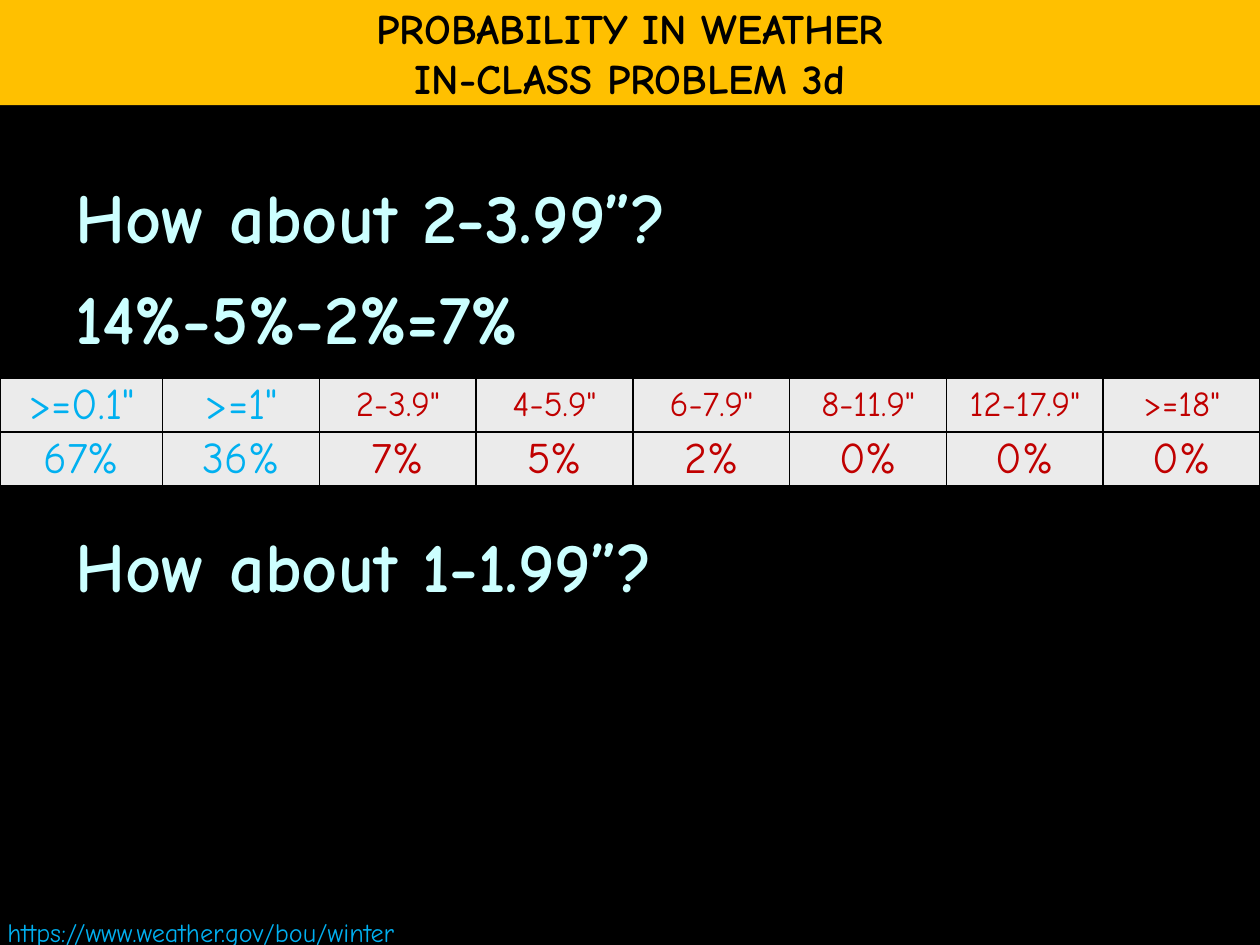
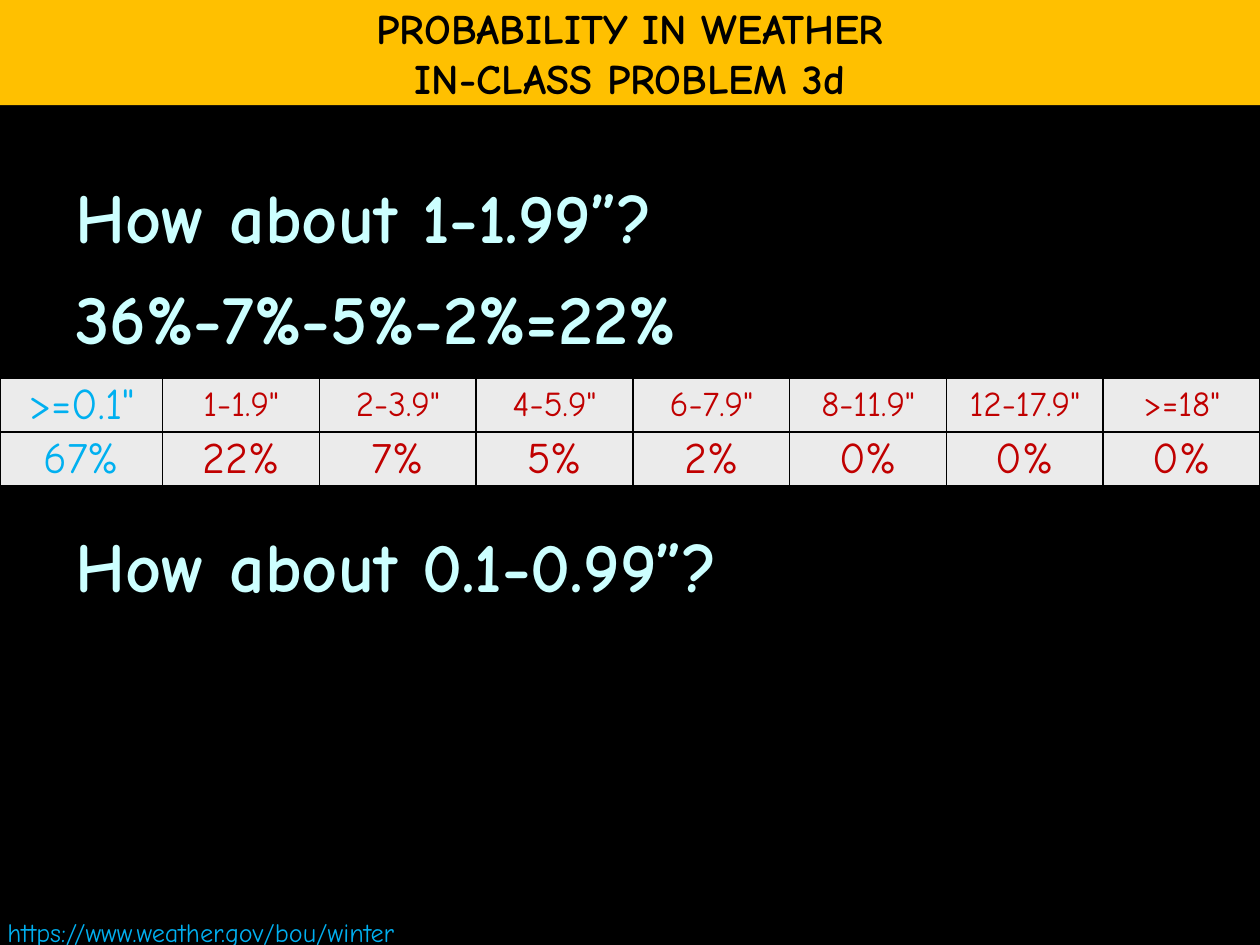
from lxml import etree
from pptx import Presentation
from pptx import util as u
from pptx.dml.color import RGBColor
from pptx.enum import shapes, text
from pptx.oxml import ns

# Content
TITLE = ["PROBABILITY IN WEATHER", "IN-CLASS PROBLEM 3d"]
SOURCE = "https://www.weather.gov/bou/winter"
UPPER_RANGES = [("4-5.9\"", "5%"), ("6-7.9\"", "2%"), ("8-11.9\"", "0%"),
                ("12-17.9\"", "0%"), (">=18\"", "0%")]
AT_LEAST_TENTH = (">=0.1\"", "67%")
TWO_TO_FOUR = ("2-3.9\"", "7%")
PROBLEMS = [
    {"lines": ["How about 2-3.99”?", "14%-5%-2%=7%", "How about 1-1.99”?"],
     "cumulative": [AT_LEAST_TENTH, (">=1\"", "36%")],
     "solved": [TWO_TO_FOUR] + UPPER_RANGES},
    {"lines": ["How about 1-1.99”?", "36%-7%-5%-2%=22%", "How about 0.1-0.99”?"],
     "cumulative": [AT_LEAST_TENTH],
     "solved": [("1-1.9\"", "22%"), TWO_TO_FOUR] + UPPER_RANGES},
]

# Style
FONT = "Comic Neue"
COLORS = {"background": "000000", "band": "FFC000", "title": "000000",
          "question": "CCFFFF", "cumulative": "00B0F0", "solved": "C00000",
          "source": "00B0F0", "cell": "EBEBEB", "border": "000000"}
WIDTH, HEIGHT = u.Cm(25.4), u.Cm(19.05)
FIRST_COLUMN, ROW_HEIGHT = u.Cm(3.28), u.Cm(1.09)
LINE_GAP, TABLE_GAP = 9.5, 94  # points above a line, and above the line below the table


def color(name):
    return RGBColor.from_string(COLORS[name])


def write(frame, lines, size, color_name, bold=False, align=text.PP_ALIGN.LEFT, gaps=None):
    for index, line in enumerate(lines):
        paragraph = frame.paragraphs[0] if index == 0 else frame.add_paragraph()
        paragraph.alignment = align
        if gaps:
            paragraph.space_before = u.Pt(gaps[index])
        run = paragraph.add_run()
        run.text = line
        run.font.name, run.font.size, run.font.bold = FONT, u.Pt(size), bold
        run.font.color.rgb = color(color_name)


def add_text(slide, left, top, width, height, lines, **style):
    frame = slide.shapes.add_textbox(left, top, width, height).text_frame
    frame.word_wrap = True
    write(frame, lines, **style)
    return frame


def add_borders(cell):
    properties = cell._tc.get_or_add_tcPr()
    for position, side in enumerate(("lnL", "lnR", "lnT", "lnB")):
        line = etree.Element(ns.qn("a:" + side), w=str(u.Pt(1)))
        fill = etree.SubElement(line, ns.qn("a:solidFill"))
        etree.SubElement(fill, ns.qn("a:srgbClr"), val=COLORS["border"])
        properties.insert(position, line)


def add_chances(slide, cumulative, solved):
    columns = cumulative + solved
    table = slide.shapes.add_table(2, len(columns), 0, u.Cm(7.62), WIDTH, 2 * ROW_HEIGHT).table
    other_width = (WIDTH - FIRST_COLUMN) // (len(columns) - 1)
    for index, column in enumerate(columns):
        table.columns[index].width = other_width if index else FIRST_COLUMN
        kind = "cumulative" if index < len(cumulative) else "solved"
        for row, value in enumerate(column):
            cell = table.cell(row, index)
            cell.fill.solid()
            cell.fill.fore_color.rgb = color("cell")
            cell.vertical_anchor = text.MSO_ANCHOR.MIDDLE
            cell.margin_left = cell.margin_right = cell.margin_top = u.Cm(0.02)
            cell.margin_bottom = 0
            size = 20 if kind == "solved" and row == 0 else 25
            write(cell.text_frame, [value], size, kind, align=text.PP_ALIGN.CENTER)
            add_borders(cell)


def add_title_band(slide):
    band = slide.shapes.add_shape(shapes.MSO_SHAPE.RECTANGLE, 0, 0, WIDTH, u.Cm(2.12))
    band.shadow.inherit = False
    band.fill.solid()
    band.fill.fore_color.rgb = color("band")
    band.line.fill.background()
    band.text_frame.word_wrap = False
    band.text_frame.vertical_anchor = text.MSO_ANCHOR.MIDDLE
    write(band.text_frame, TITLE, 24, "title", bold=True, align=text.PP_ALIGN.CENTER)


def add_problem(presentation, problem):
    slide = presentation.slides.add_slide(presentation.slide_layouts[6])
    slide.background.fill.solid()
    slide.background.fill.fore_color.rgb = color("background")
    add_text(slide, u.Cm(1.27), u.Cm(3.38), u.Cm(24.13), u.Cm(15.67), problem["lines"],
             size=40, color_name="question", bold=True, gaps=[LINE_GAP, LINE_GAP, TABLE_GAP])
    source = add_text(slide, u.Cm(-0.1), u.Cm(18.34), u.Cm(12.73), u.Cm(0.89), [SOURCE],
                      size=15, color_name="source")
    source.auto_size = text.MSO_AUTO_SIZE.SHAPE_TO_FIT_TEXT
    add_chances(slide, problem["cumulative"], problem["solved"])
    add_title_band(slide)


def main():
    presentation = Presentation()
    presentation.slide_width, presentation.slide_height = WIDTH, HEIGHT
    for problem in PROBLEMS:
        add_problem(presentation, problem)
    presentation.save("out.pptx")


if __name__ == "__main__":
    main()
